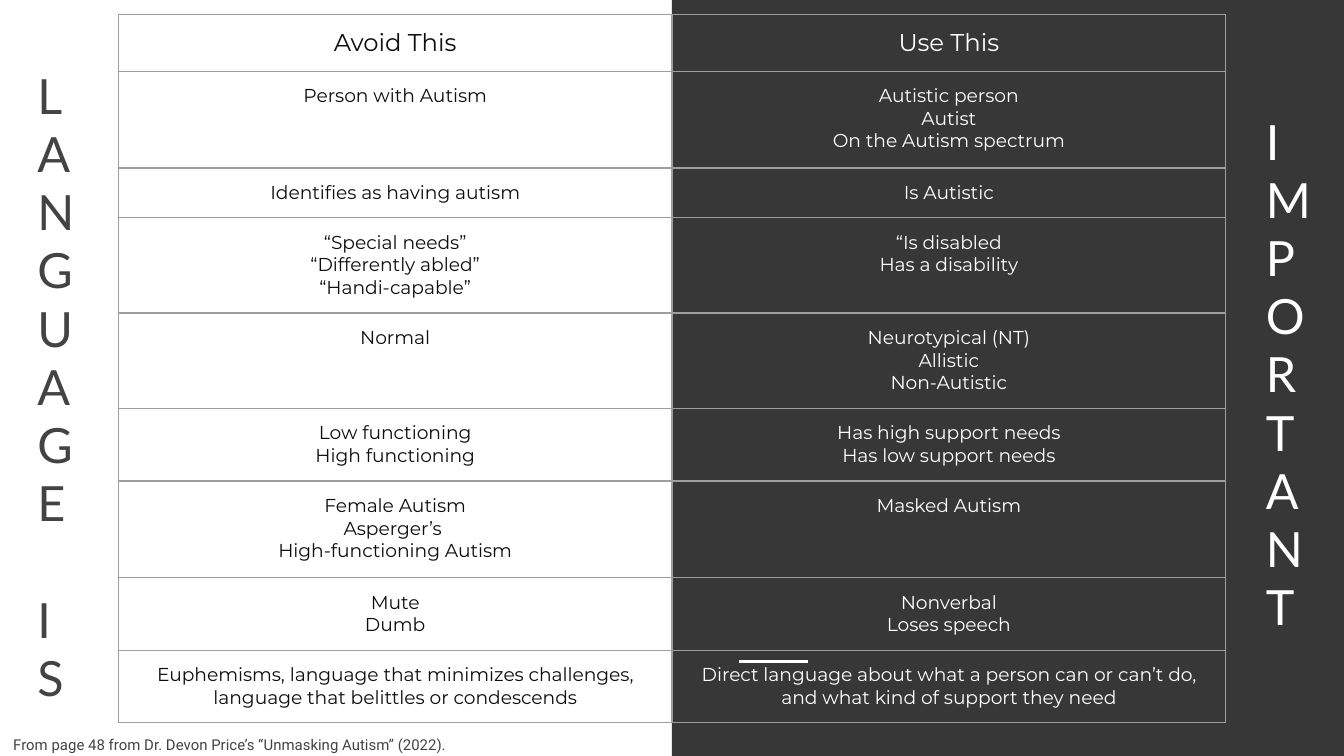
from lxml import etree
from pptx import Presentation
from pptx.dml.color import RGBColor
from pptx.enum.shapes import MSO_CONNECTOR, MSO_SHAPE
from pptx.enum.text import PP_ALIGN
from pptx.oxml import parse_xml
from pptx.oxml.ns import nsdecls, qn
from pptx.util import Inches, Pt

RECTANGLE = MSO_SHAPE.RECTANGLE
STRAIGHT = MSO_CONNECTOR.STRAIGHT
LEFT, CENTER = PP_ALIGN.LEFT, PP_ALIGN.CENTER

WHITE, BLACK, DARK, GREY, BORDER = "FFFFFF", "0E0E0E", "373737", "434343", "9E9E9E"
MARGIN = Inches(0.1)


def color(hex_string):
    return RGBColor.from_string(hex_string)


def write_lines(frame, text, size, font, hex_string, align):
    """Fill a text frame with one paragraph per line of text."""
    frame.word_wrap = True
    frame.text = text
    for paragraph in frame.paragraphs:
        paragraph.alignment = align
        for run in paragraph.runs:
            run.font.size = Pt(size)
            run.font.name = font
            run.font.color.rgb = color(hex_string)


prs = Presentation()
prs.slide_width = Inches(10)
prs.slide_height = Inches(10) * 9 // 16
slide = prs.slides.add_slide(prs.slide_layouts[6])
shapes = slide.shapes

# Dark right half and its accent line
dark_half = shapes.add_shape(RECTANGLE, Inches(5), 0, Inches(5), prs.slide_height)
dark_half.shadow.inherit = False
dark_half.fill.solid()
dark_half.fill.fore_color.rgb = color(DARK)
dark_half.line.fill.background()

accent = shapes.add_connector(STRAIGHT, Inches(5.5), Inches(4.92), Inches(6.01), Inches(4.92))
accent.line.color.rgb = color(WHITE)
accent.line.width = Pt(1.5)
etree.SubElement(accent._element.spPr, qn("a:effectLst"))

# Table of wordings
wordings = [
    ("Avoid This", "Use This"),
    ("Person with Autism", "Autistic person\nAutist\nOn the Autism spectrum"),
    ("Identifies as having autism", "Is Autistic"),
    ("“Special needs”\n“Differently abled”\n“Handi-capable”", "“Is disabled\nHas a disability"),
    ("Normal", "Neurotypical (NT)\nAllistic\nNon-Autistic"),
    ("Low functioning\nHigh functioning", "Has high support needs\nHas low support needs"),
    ("Female Autism\nAsperger’s \nHigh-functioning Autism", "Masked Autism"),
    ("Mute\nDumb", "Nonverbal\nLoses speech"),
    ("Euphemisms, language that minimizes challenges, "
     "language that belittles or condescends",
     "Direct language about what a person can or can’t do, "
     "and what kind of support they need"),
]
row_heights = [0.42, 0.72, 0.37, 0.71, 0.71, 0.54, 0.72, 0.54, 0.54]

table = shapes.add_table(len(wordings), 2, Inches(0.88), Inches(0.11),
                         Inches(8.24), Inches(sum(row_heights))).table
table.first_row = False
table.horz_banding = False
for column in table.columns:
    column.width = Inches(4.12)

for r, (wording, height) in enumerate(zip(wordings, row_heights)):
    table.rows[r].height = Inches(height)
    for c, (text, text_color) in enumerate(zip(wording, (BLACK, WHITE))):
        cell = table.cell(r, c)
        cell.margin_left = cell.margin_right = MARGIN
        cell.margin_top = cell.margin_bottom = MARGIN
        write_lines(cell.text_frame, text, 13 if r == 0 else 10, "Montserrat", text_color, CENTER)
        cell.fill.background()
        for i, side in enumerate(("lnL", "lnR", "lnT", "lnB")):
            cell._tc.tcPr.insert(i, parse_xml(
                f'<a:{side} {nsdecls("a")} w="{Pt(0.75)}"><a:solidFill>'
                f'<a:srgbClr val="{BORDER}"/></a:solidFill></a:{side}>'))

# Vertical words at both edges and the source line
captions = [
    (0.18, 0.39, 0.53, 5, "\n".join("LANGUAGEIS"), 26, "Lato", GREY),
    (9.32, 0.73, 0.53, 5, "IMPORTANT", 26, "Lato", WHITE),
    (0, 5.41, 4.27, 0.19, "From page 48 from Dr. Devon Price’s “Unmasking Autism” (2022).",
     8, "Roboto", GREY),
]
frames = []
for left, top, width, height, text, size, font, text_color in captions:
    frame = shapes.add_textbox(Inches(left), Inches(top), Inches(width), Inches(height)).text_frame
    frame.margin_left = frame.margin_right = MARGIN
    frame.margin_top = frame.margin_bottom = MARGIN
    write_lines(frame, text, size, font, text_color, LEFT)
    frames.append(frame)

# One line of space between LANGUAGE and IS
frames[0].paragraphs[len("LANGUAGE")].space_before = Pt(31.2)

prs.save("out.pptx")
